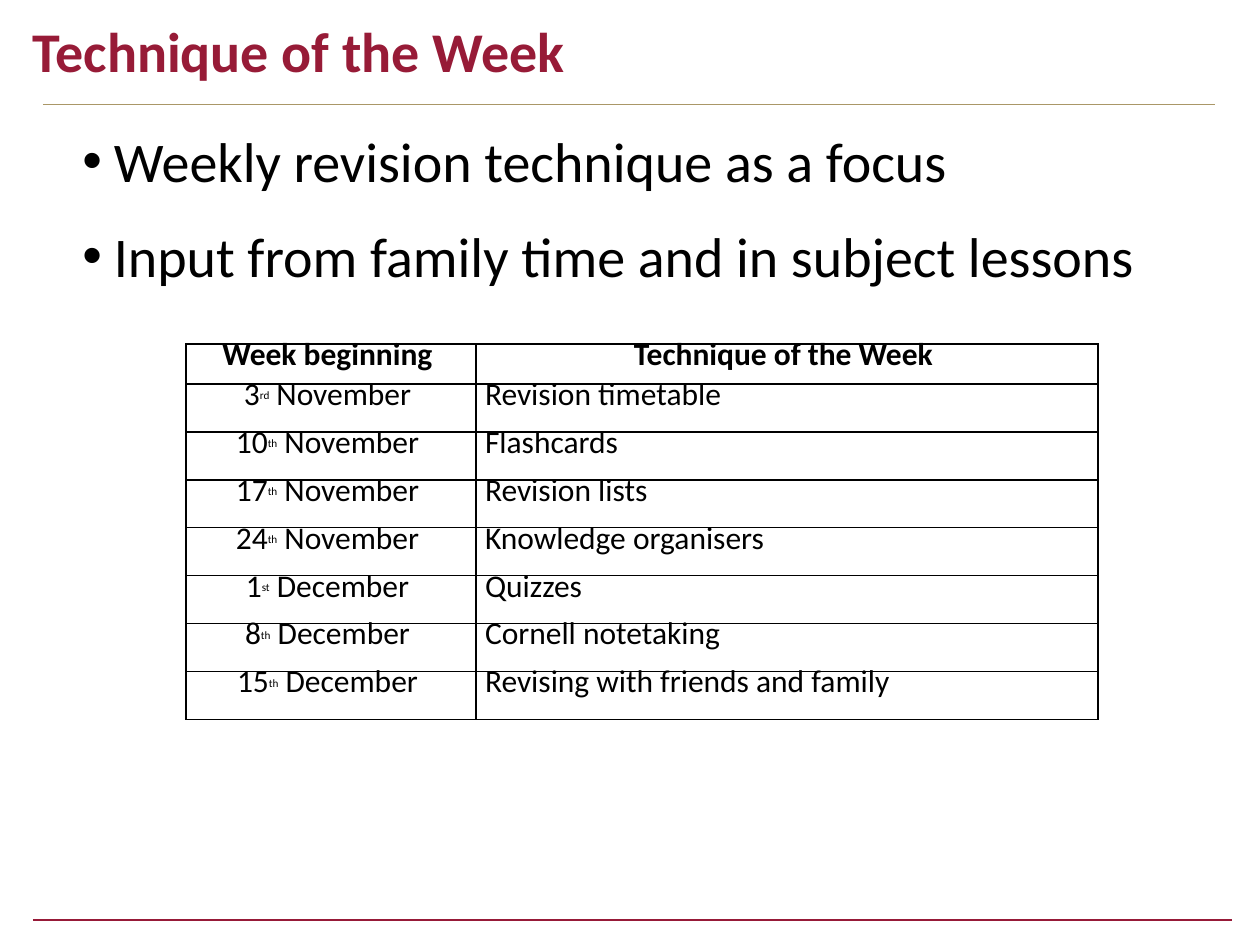
from lxml import etree
from pptx import Presentation
from pptx import util as u
from pptx.dml.color import RGBColor
from pptx.enum import shapes, text
from pptx.oxml.ns import qn

TITLE = "Technique of the Week"
BULLETS = ["Weekly revision technique as a focus",
           "Input from family time and in subject lessons"]
HEADER = ("Week beginning", "Technique of the Week")
WEEKS = [  # day, ordinal ending, month, technique
    ("3", "rd", "November", "Revision timetable"),
    ("10", "th", "November", "Flashcards"),
    ("17", "th", "November", "Revision lists"),
    ("24", "th", "November", "Knowledge organisers"),
    ("1", "st", "December", "Quizzes"),
    ("8", "th", "December", "Cornell notetaking"),
    ("15", "th", "December", "Revising with friends and family"),
]
THEME = {"font": "Calibri", "title": "971B37", "footer": "971A38",
         "rule": "AA9767", "ink": "000000",
         "big": 32, "cell": 18, "ordinal": 11}
RULES = [  # x1, x2, y, colour, points
    (33, 1232, 920, THEME["footer"], 1),
    (43, 1215, 104, THEME["rule"], 0.5),
]
COLS = (290, 622)
HEADER_H, ROW_H = 40, 48
PX_PER_INCH = 126


def px(n):
    return u.Emu(round(n * 914400 / PX_PER_INCH))


def set_all(obj, **values):
    for name, value in values.items():
        setattr(obj, name, value)


def add_run(p, words, size, color=THEME["ink"], bold=False):
    r = p.add_run()
    r.text = words
    set_all(r.font, name=THEME["font"], size=u.Pt(size), bold=bold)
    r.font.color.rgb = RGBColor.from_string(color)
    return r


def add_rule(s, x1, x2, y, color, width):
    line = s.shapes.add_connector(shapes.MSO_CONNECTOR.STRAIGHT,
                                  px(x1), px(y), px(x2), px(y))
    line.line.color.rgb = RGBColor.from_string(color)
    line.line.width = u.Pt(width)
    etree.SubElement(line._element.spPr, qn("a:effectLst"))


def add_bullet(p):
    pPr = p._p.get_or_add_pPr()
    pPr.set("marL", str(u.Inches(0.25)))
    pPr.set("indent", str(-u.Inches(0.25)))
    etree.SubElement(pPr, qn("a:buFont"), typeface="Arial")
    etree.SubElement(pPr, qn("a:buChar"), char="•")


def add_borders(cell):
    tcPr = cell._tc.get_or_add_tcPr()
    for i, side in enumerate("LRTB"):
        ln = etree.Element(qn(f"a:ln{side}"), w=str(u.Pt(0.75)))
        fill = etree.SubElement(ln, qn("a:solidFill"))
        etree.SubElement(fill, qn("a:srgbClr"), val=THEME["ink"])
        tcPr.insert(i, ln)


def format_cell(cell, align, right):
    """Clear the fill, draw the borders and return the paragraph to write in."""
    cell.fill.background()
    add_borders(cell)
    set_all(cell, margin_left=px(9), margin_right=px(right),
            margin_top=px(6), margin_bottom=px(6))
    p = cell.text_frame.paragraphs[0]
    set_all(p, alignment=align, line_spacing=u.Pt(13.5))
    return p


def add_title(s):
    sp = s.shapes.title
    set_all(sp, left=px(20), top=px(10), width=px(1166), height=px(81))
    tf = sp.text_frame
    set_all(tf, vertical_anchor=text.MSO_ANCHOR.TOP, word_wrap=True,
            auto_size=text.MSO_AUTO_SIZE.NONE)
    p = tf.paragraphs[0]
    p.alignment = text.PP_ALIGN.LEFT
    add_run(p, TITLE, THEME["big"], THEME["title"], True)


def add_bullets(s):
    tf = s.shapes.add_textbox(px(70), px(156), px(1144), px(210)).text_frame
    tf.word_wrap = True
    for i, words in enumerate(BULLETS):
        p = tf.add_paragraph() if i else tf.paragraphs[0]
        add_bullet(p)
        p.line_spacing = u.Pt(18)
        if i:
            p.space_before = u.Pt(36)
        add_run(p, words, THEME["big"])


def add_schedule(s):
    n = len(WEEKS)
    table = s.shapes.add_table(n + 1, 2, px(186), px(344), px(sum(COLS)),
                               px(HEADER_H + n * ROW_H)).table
    set_all(table, first_row=False, horz_banding=False)
    for col, width in zip(table.columns, COLS):
        col.width = px(width)
    for i, row in enumerate(table.rows):
        row.height = px(ROW_H if i else HEADER_H)

    center, left = text.PP_ALIGN.CENTER, text.PP_ALIGN.LEFT
    for c, words in enumerate(HEADER):
        p = format_cell(table.cell(0, c), center, 16)
        add_run(p, words, THEME["cell"], bold=True)
    for i, (day, ordinal, month, technique) in enumerate(WEEKS, 1):
        p = format_cell(table.cell(i, 0), center, 16)
        add_run(p, day, THEME["cell"])
        r = add_run(p, ordinal, THEME["ordinal"])
        r.font._element.set("baseline", "30000")
        add_run(p, f" {month}", THEME["cell"])
        p = format_cell(table.cell(i, 1), left, 9)
        add_run(p, technique, THEME["cell"])


def main():
    prs = Presentation()
    set_all(prs, slide_width=u.Inches(10), slide_height=u.Inches(7.5))
    s = prs.slides.add_slide(prs.slide_layouts[5])
    for rule in RULES:
        add_rule(s, *rule)
    add_title(s)
    add_bullets(s)
    add_schedule(s)
    prs.save("out.pptx")


if __name__ == "__main__":
    main()
